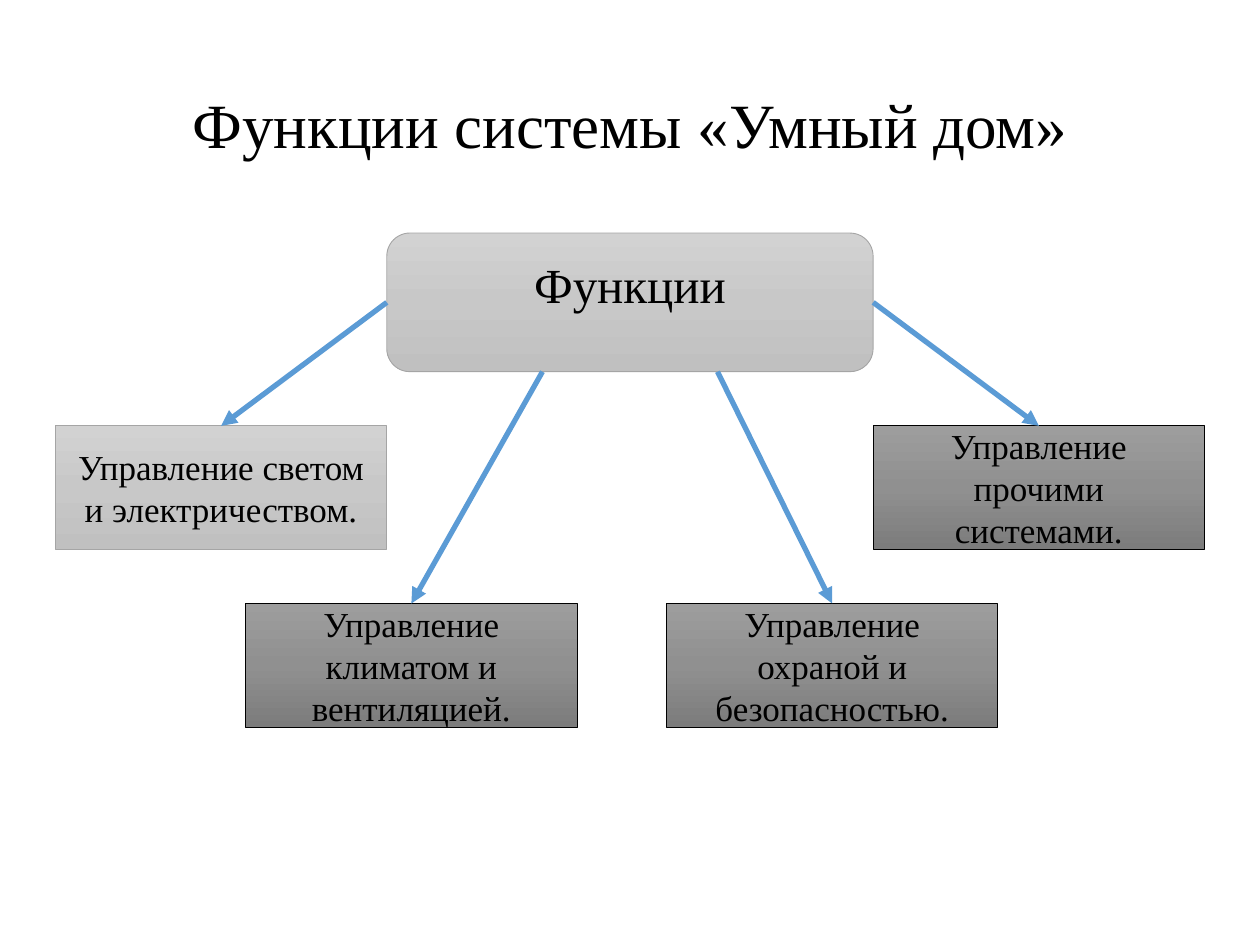
from copy import deepcopy

from lxml.etree import SubElement
from pptx import Presentation
from pptx.dml.color import RGBColor
from pptx.enum.shapes import MSO_CONNECTOR, MSO_SHAPE
from pptx.enum.text import MSO_ANCHOR, PP_ALIGN
from pptx.oxml.ns import qn
from pptx.util import Inches, Pt

LIGHT = {"stops": ["D2D2D2", "C8C8C8", "C0C0C0"], "outline": "A5A5A5"}
DARK = {"stops": ["9D9D9D", "909090", "7C7C7C"], "outline": "000000"}
ARROW = "5B9BD5"
BRANCH_WIDTH, BRANCH_HEIGHT = 2.63, 0.98
BRANCHES = [
    ("Управление светом и электричеством.", 0, 1.53, LIGHT),
    ("Управление климатом и вентиляцией.", 1.51, 2.94, DARK),
    ("Управление охраной и безопасностью.", 4.85, 2.94, DARK),
    ("Управление прочими системами.", 6.49, 1.53, DARK),
]


def color(value):
    """Turn a hex string into a colour."""
    return RGBColor.from_string(value)


def write(shape, text, size, spacing=1.0, bottom=0.05):
    """Put centred text into a shape."""
    frame = shape.text_frame
    frame.word_wrap = True
    frame.vertical_anchor = MSO_ANCHOR.MIDDLE
    frame.margin_bottom = Inches(bottom)
    para = frame.paragraphs[0]
    para.alignment = PP_ALIGN.CENTER
    para.line_spacing = spacing
    span = para.add_run()
    span.text = text
    span.font.name = "Times New Roman"
    span.font.size = Pt(size)
    span.font.color.rgb = color("000000")


def add_title(page, left, top, width, height):
    """Place the slide heading."""
    box = page.shapes.add_textbox(Inches(left), Inches(top), Inches(width), Inches(height))
    write(box, "Функции системы «Умный дом»", size=36, spacing=0.9)


def add_block(page, kind, left, top, width, height, style):
    """Place an outlined shape with a vertical three-stop gradient."""
    block = page.shapes.add_shape(kind, Inches(left), Inches(top), Inches(width), Inches(height))
    block.shadow.inherit = False
    block.fill.gradient()
    block.fill.gradient_angle = 270
    stop_list = block.element.spPr.find(".//" + qn("a:gsLst"))
    stop_list.insert(1, deepcopy(stop_list[0]))
    for index, (stop, shade) in enumerate(zip(block.fill.gradient_stops, style["stops"])):
        stop.position = index / 2
        stop.color.rgb = color(shade)
    block.line.color.rgb = color(style["outline"])
    block.line.width = Pt(0.5)
    return block


def add_arrow(page, root, branch, index):
    """Draw an arrow from the root to the top of a branch."""
    share = [0, 0.32, 0.68, 1][index]
    start = root.left + int(root.width * share)
    arrow = page.shapes.add_connector(
        MSO_CONNECTOR.STRAIGHT, start, root.top + root.height, start, branch.top)
    if share in (0, 1):
        arrow.begin_connect(root, 1 if share == 0 else 3)
    arrow.end_connect(branch, 0)
    arrow.line.color.rgb = color(ARROW)
    arrow.line.width = Pt(3)
    SubElement(arrow.line._get_or_add_ln(), qn("a:tailEnd"), type="triangle")
    SubElement(arrow._element.spPr, qn("a:effectLst"))


def add_diagram(page, left, top, width):
    """Place the root, its branches and the arrows between them."""
    root_width = 3.86
    root = add_block(page, MSO_SHAPE.ROUNDED_RECTANGLE, left + (width - root_width) / 2, top,
                     root_width, 1.1, LIGHT)
    write(root, "Функции", size=28, bottom=0.34)
    branches = []
    for text, across, down, style in BRANCHES:
        branch = add_block(page, MSO_SHAPE.RECTANGLE, left + across, top + down,
                           BRANCH_WIDTH, BRANCH_HEIGHT, style)
        write(branch, text, size=20)
        branches.append(branch)
    for index, branch in enumerate(branches):
        add_arrow(page, root, branch, index)


def main():
    """Build and save the deck."""
    deck = Presentation()
    deck.slide_width, deck.slide_height = Inches(10), Inches(7.5)
    page = deck.slides.add_slide(deck.slide_layouts[6])
    add_title(page, 0.69, 0.29, 8.62, 1.45)
    add_diagram(page, 0.44, 1.85, 9.12)
    deck.save("out.pptx")


if __name__ == "__main__":
    main()
